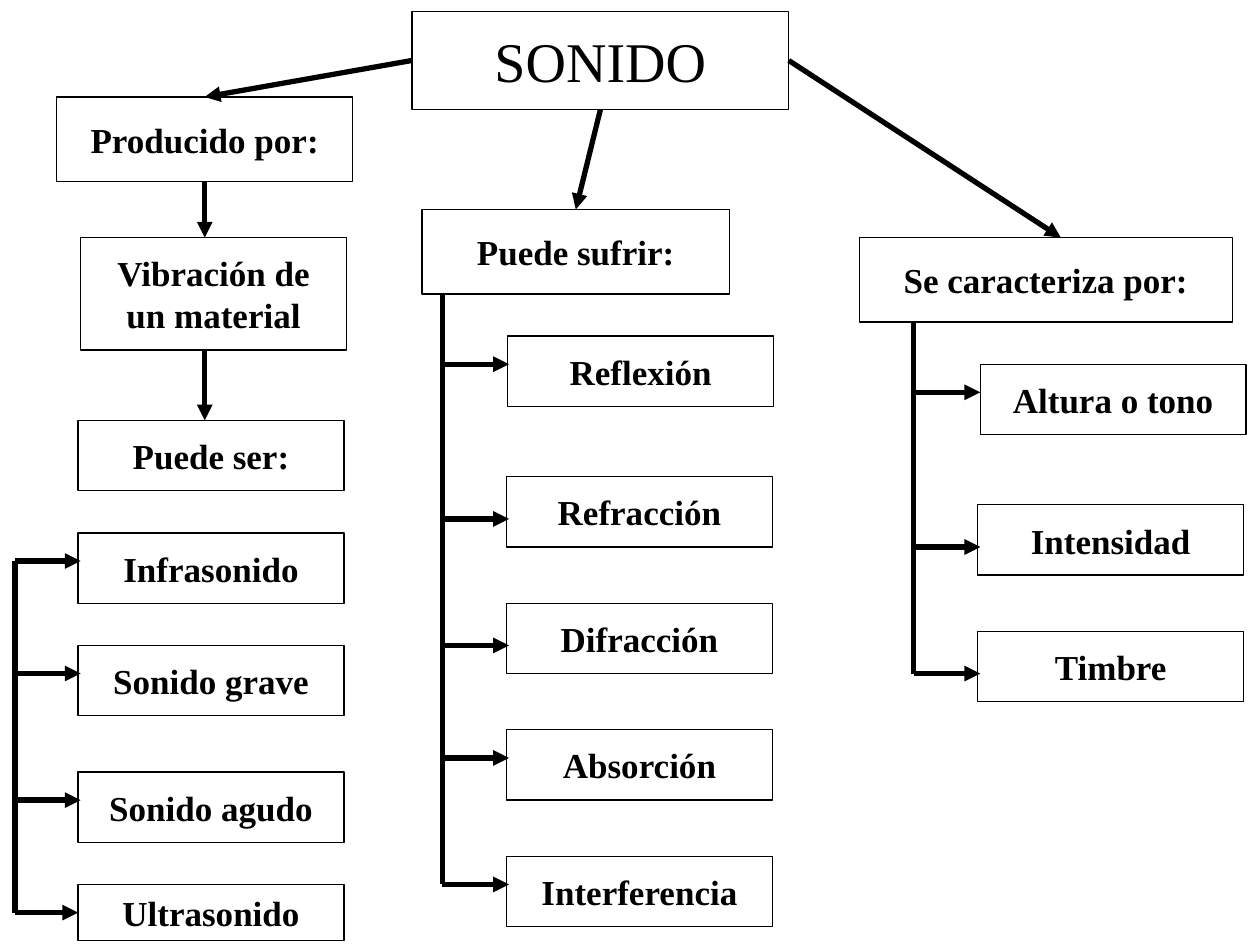
from dataclasses import dataclass

from lxml import etree
from pptx import Presentation
from pptx.dml.color import RGBColor
from pptx.enum.shapes import MSO_CONNECTOR, MSO_SHAPE
from pptx.enum.text import MSO_ANCHOR, MSO_AUTO_SIZE, PP_ALIGN
from pptx.oxml.ns import qn
from pptx.util import Inches, Pt

RECTANGLE = MSO_SHAPE.RECTANGLE
STRAIGHT = MSO_CONNECTOR.STRAIGHT
MIDDLE = MSO_ANCHOR.MIDDLE
CENTER = PP_ALIGN.CENTER
NO_AUTOFIT = MSO_AUTO_SIZE.NONE
TOP, LEFT, BOTTOM, RIGHT = range(4)

# Grid: x is a percentage of the slide width, y counts rows from the first box
SLIDE_WIDTH, SLIDE_HEIGHT = 10, 7.5
GRID_TOP = 0.77
ROW = 6.25 / 56
BOX_WIDTH, BOX_ROWS = 21.1, 5


@dataclass(frozen=True)
class Theme:
    font: str = "Times New Roman"
    ink: RGBColor = RGBColor(0, 0, 0)
    title_size: int = 32
    box_size: int = 20
    border: float = 0.75
    stroke: float = 3


THEME = Theme()


def across(share):
    return Inches(SLIDE_WIDTH * share / 100)


def down(row):
    return Inches(GRID_TOP + row * ROW)


def format_box(shape, lines, size, bold):
    """Give a shape its outline and its centred text."""
    shape.fill.background()
    shape.line.color.rgb = THEME.ink
    shape.line.width = Pt(THEME.border)
    frame = shape.text_frame
    frame.auto_size = NO_AUTOFIT
    frame.word_wrap = False
    frame.vertical_anchor = MIDDLE
    for index, text in enumerate(lines):
        paragraph = frame.add_paragraph() if index else frame.paragraphs[0]
        paragraph.alignment = CENTER
        run = paragraph.add_run()
        run.text = text
        run.font.name = THEME.font
        run.font.size = Pt(size)
        run.font.bold = bold
        run.font.color.rgb = THEME.ink


def add_title(slide, text):
    title = slide.shapes.title
    title.left, title.top = across(32.7), Inches(0.09)
    title.width, title.height = across(29.9), Inches(0.78)
    format_box(title, [text], THEME.title_size, False)
    return title


def add_box(slide, lines, x, row, width=BOX_WIDTH, rows=BOX_ROWS):
    shape = slide.shapes.add_shape(
        RECTANGLE, across(x), down(row), across(width), Inches(rows * ROW))
    shape.shadow.inherit = False
    format_box(shape, lines, THEME.box_size, True)
    return shape


def add_line(slide, start, end, arrow=True, source=None, target=None):
    """Draw a line; source and target are optional (shape, side) joints."""
    connector = slide.shapes.add_connector(
        STRAIGHT, across(start[0]), down(start[1]), across(end[0]), down(end[1]))
    if source:
        connector.begin_connect(*source)
    if target:
        connector.end_connect(*target)
    connector.line.color.rgb = THEME.ink
    connector.line.width = Pt(THEME.stroke)
    if arrow:
        outline = connector.line._get_or_add_ln()
        etree.SubElement(outline, qn("a:tailEnd"), type="triangle")
    etree.SubElement(connector._element.spPr, qn("a:effectLst"))


def add_branch(slide, trunk_x, trunk_top, box_x, items):
    """Draw a trunk with one arrow and one box for each item.

    Items hold the text, box row, arrow row, box height and box shift.
    """
    add_line(slide, (trunk_x, trunk_top), (trunk_x, items[-1][2]), arrow=False)
    for text, row, arrow_row, rows, shift in items:
        box = add_box(slide, [text], box_x + shift, row, rows=rows)
        centred = arrow_row == row + rows / 2
        add_line(slide, (trunk_x, arrow_row), (box_x + 0.2, arrow_row),
                 target=(box, LEFT) if centred else None)


def main():
    presentation = Presentation()
    presentation.slide_width = Inches(SLIDE_WIDTH)
    presentation.slide_height = Inches(SLIDE_HEIGHT)
    slide = presentation.slides.add_slide(presentation.slide_layouts[5])

    # Title and the heads of the three columns
    title = add_title(slide, "SONIDO")
    produced = add_box(slide, ["Producido por:"], 4.5, 0, 23.5, 6)
    undergoes = add_box(slide, ["Puede sufrir:"], 33.5, 8, 24.4, 6)
    add_box(slide, ["Se caracteriza por:"], 68.2, 10, 29.6, 6)
    add_line(slide, (32.7, -3), (16, 0),
             source=(title, LEFT), target=(produced, TOP))
    add_line(slide, (47.2, 1), (45.1, 8),
             source=(title, BOTTOM), target=(undergoes, TOP))
    add_line(slide, (62.6, -3), (84.2, 10), source=(title, RIGHT))

    # Left column: origin and kinds of sound
    add_box(slide, ["Vibración de", "un material"], 6.4, 10, rows=8)
    add_box(slide, ["Puede ser:"], 6.2, 23)
    add_line(slide, (16.25, 6), (16.25, 10), source=(produced, BOTTOM))
    add_line(slide, (16.25, 18), (16.25, 23))
    add_branch(slide, 1.2, 33, 6.2, [
        ("Infrasonido", 31, 33, BOX_ROWS, 0),
        ("Sonido grave", 39, 41, BOX_ROWS, 0),
        ("Sonido agudo", 48, 50, BOX_ROWS, 0),
        ("Ultrasonido", 56, 58, 4, 0),
    ])

    # Middle column: phenomena
    add_branch(slide, 35.1, 14, 40.2, [
        ("Reflexión", 17, 19, BOX_ROWS, 0.1),
        ("Refracción", 27, 30, BOX_ROWS, 0),
        ("Difracción", 36, 39, BOX_ROWS, 0),
        ("Absorción", 45, 47, BOX_ROWS, 0),
        ("Interferencia", 54, 56, BOX_ROWS, 0),
    ])

    # Right column: qualities
    add_branch(slide, 72.5, 16, 77.6, [
        ("Altura o tono", 19, 21, BOX_ROWS, 0.2),
        ("Intensidad", 29, 32, BOX_ROWS, 0),
        ("Timbre", 38, 41, BOX_ROWS, 0),
    ])

    presentation.save("out.pptx")


if __name__ == "__main__":
    main()
